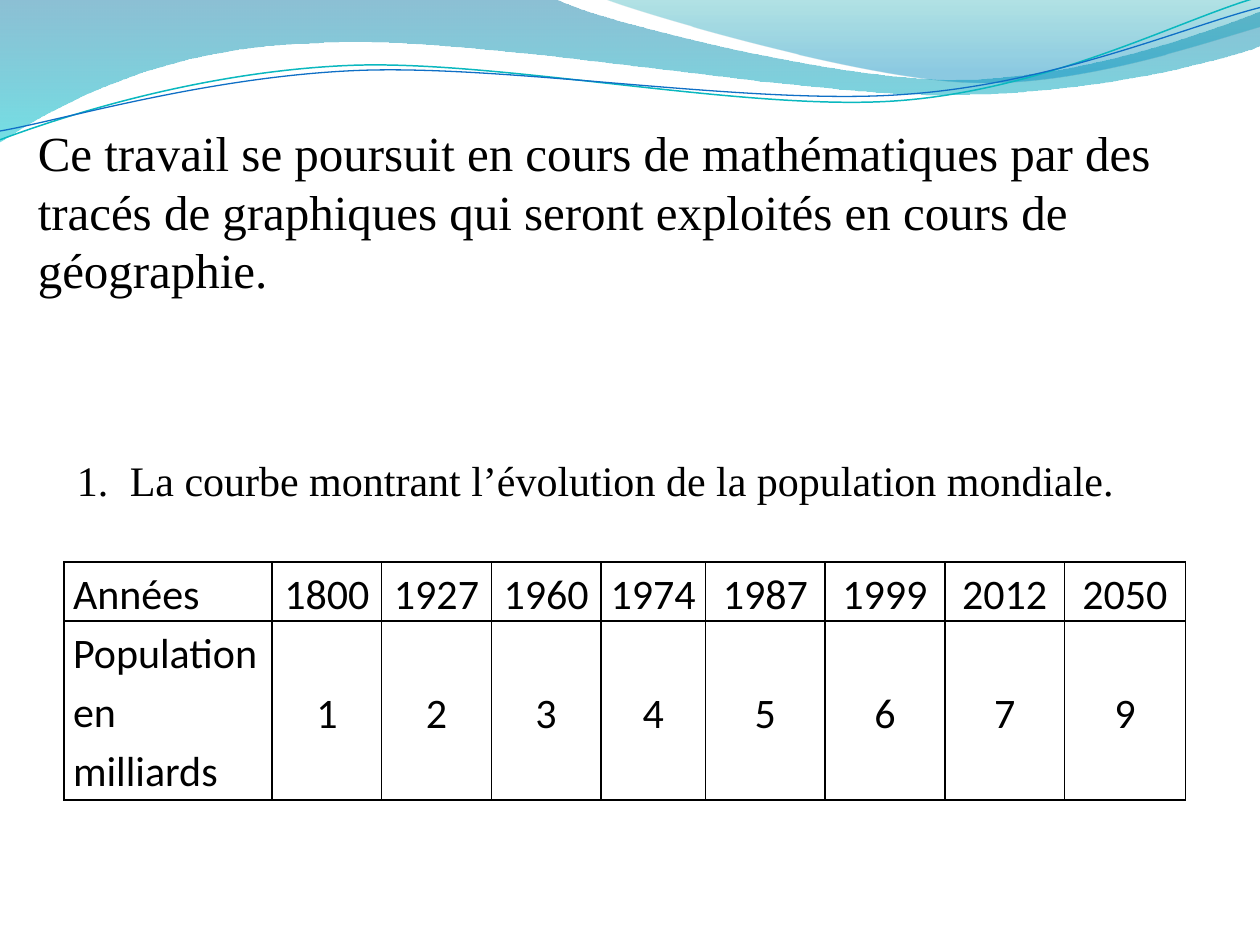
from lxml.etree import SubElement
from pptx import Presentation
from pptx.dml.color import RGBColor
from pptx.enum.text import MSO_ANCHOR, MSO_AUTO_SIZE, PP_ALIGN
from pptx.oxml import parse_xml
from pptx.oxml.ns import nsdecls, qn
from pptx.util import Inches, Pt

COLORS = {
    "text": "000000", "border": "000000",
    "wave_top": "0074A1", "wave_bottom": "00C6CF",
    "crest_top": "00A1A9", "crest_bottom": "008BBF",
    "teal_line": "0AB8BF", "blue_line": "0F6FC6",
}


def draw_curves(shapes, start, segments, closed):
    """Outline through segments: 2 numbers for a line, 6 for a Bézier curve."""
    points = [(Inches(segment[i]), Inches(segment[i + 1]))
              for segment in segments for i in range(0, len(segment), 2)]
    builder = shapes.build_freeform(*map(Inches, start), scale=1)
    builder.add_line_segments(points, close=closed)
    outline = builder.convert_to_shape()
    outline.shadow.inherit = False
    # Join the three points of each curve into one Bézier element
    pieces = iter(outline.element.findall(".//" + qn("a:lnTo")))
    for segment in segments:
        first = next(pieces)
        if len(segment) == 6:
            first.tag = qn("a:cubicBezTo")
            for piece in (next(pieces), next(pieces)):
                first.append(piece[0])
                piece.getparent().remove(piece)
    return outline


def style_text(frame, font, size, align, spacing):
    for paragraph in frame.paragraphs:
        paragraph.alignment = align
        paragraph.line_spacing = spacing
        paragraph.space_before = Pt(0)
        for run in paragraph.runs:
            run.font.name = font
            run.font.size = Pt(size)
            run.font.color.rgb = RGBColor.from_string(COLORS["text"])


prs = Presentation()
prs.slide_width, prs.slide_height = Inches(10), Inches(7.5)
slide = prs.slides.add_slide(prs.slide_layouts[1])

# Filled waves: start, segments, gradient stops (position, colour, opacity)
waves = [
    ((0, 0),
     [(4.4, -0.01), (4.76, 0.17, 6.64, 0.63, 7.58, 0.63),
      (8.53, 0.63, 9.58, 0.26, 10, 0.09), (10.01, 0.36),
      (9.83, 0.44, 8.7, 0.76, 7.46, 0.75), (6.22, 0.75, 3.82, 0.28, 2.57, 0.34),
      (1.29, 0.36, 0.46, 0.83, -0.01, 1.13)],
     [(0, "wave_top", 45), (100, "wave_bottom", 55)]),
    ((4.79, -0.01),
     [(5.09, 0.11, 6.82, 0.62, 7.69, 0.65), (8.56, 0.69, 9.61, 0.32, 10, 0.21),
      (10, 0)],
     [(0, "crest_top", 30), (80, "crest_bottom", 45)]),
]
for start, segments, stops in waves:
    wave = draw_curves(slide.shapes, start, segments, True)
    wave.line.fill.background()
    stop_xml = "".join(
        f'<a:gs pos="{pos * 1000}"><a:srgbClr val="{COLORS[color]}">'
        f'<a:alpha val="{opacity * 1000}"/></a:srgbClr></a:gs>'
        for pos, color, opacity in stops)
    gradient = parse_xml(
        f'<a:gradFill {nsdecls("a")} rotWithShape="1"><a:gsLst>{stop_xml}</a:gsLst>'
        '<a:lin ang="5400000" scaled="0"/></a:gradFill>')
    wave.element.spPr.find(qn("a:custGeom")).addnext(gradient)

# Thin wave lines
ripples = [
    ((0, 1.11), [(0.48, 0.93, 1.58, 0.57, 2.77, 0.52), (3.95, 0.47, 5.93, 0.89, 7.13, 0.8),
                 (8.33, 0.71, 9.38, 0.15, 9.98, -0.02)], "teal_line", 0.85),
    ((0, 1.04), [(0.47, 0.96, 1.64, 0.61, 2.83, 0.56), (4.03, 0.51, 5.97, 0.84, 7.17, 0.75),
                 (8.36, 0.67, 9.41, 0.21, 10, 0.06)], "blue_line", 0.75),
]
for start, segments, color, width in ripples:
    ripple = draw_curves(slide.shapes, start, segments, False)
    ripple.fill.background()
    ripple.line.color.rgb = RGBColor.from_string(COLORS[color])
    ripple.line.width = Pt(width)

# Introduction and numbered heading
introduction, heading = slide.placeholders
texts = [
    (introduction, (0.2, 0.92, 9.61, 1.51), MSO_ANCHOR.TOP, 28,
     "Ce travail se poursuit en cours de mathématiques par des tracés de graphiques "
     "qui seront exploités en cours de géographie."),
    (heading, (0.51, 3.56, 8.9, 0.5), MSO_ANCHOR.MIDDLE, 24,
     "La courbe montrant l’évolution de la population mondiale."),
]
for holder, box, anchor, size, words in texts:
    holder.left, holder.top, holder.width, holder.height = map(Inches, box)
    frame = holder.text_frame
    frame.text = words
    frame.word_wrap = True
    frame.auto_size = MSO_AUTO_SIZE.NONE
    frame.vertical_anchor = anchor
    style_text(frame, "Times New Roman", size, PP_ALIGN.LEFT, 1.0)

numbering = heading.text_frame.paragraphs[0]._p.get_or_add_pPr()
numbering.set("marL", str(Inches(0.42)))
numbering.set("indent", str(-Inches(0.42)))
SubElement(numbering, qn("a:buFont"), typeface="Times New Roman")
SubElement(numbering, qn("a:buAutoNum"), type="arabicPeriod")

# Population table
population = [
    ["Années", "1800", "1927", "1960", "1974", "1987", "1999", "2012", "2050"],
    ["Population en milliards", "1", "2", "3", "4", "5", "6", "7", "9"],
]
column_widths = [1.65] + [0.87] * 3 + [0.83] + [0.95] * 3 + [0.96]
row_heights = [0.47, 1.42]
table = slide.shapes.add_table(
    len(row_heights), len(column_widths), Inches(0.51), Inches(4.46),
    Inches(sum(column_widths)), Inches(sum(row_heights))).table
table.first_row = table.horz_banding = False
for column, width in zip(table.columns, column_widths):
    column.width = Inches(width)
for row, height, values in zip(table.rows, row_heights, population):
    row.height = Inches(height)
    for index, (cell, value) in enumerate(zip(row.cells, values)):
        cell.text = value
        cell.margin_left = cell.margin_right = Inches(0.07)
        cell.margin_top = cell.margin_bottom = 0
        cell.vertical_anchor = MSO_ANCHOR.MIDDLE if index else MSO_ANCHOR.TOP
        align = PP_ALIGN.CENTER if index else PP_ALIGN.LEFT
        style_text(cell.text_frame, "Calibri", 24, align, 1.15)
        cell.fill.background()
        for place, side in enumerate(("lnL", "lnR", "lnT", "lnB")):
            cell._tc.tcPr.insert(place, parse_xml(
                f'<a:{side} {nsdecls("a")} w="{Pt(1)}"><a:solidFill>'
                f'<a:srgbClr val="{COLORS["border"]}"/></a:solidFill></a:{side}>'))

prs.save("out.pptx")
